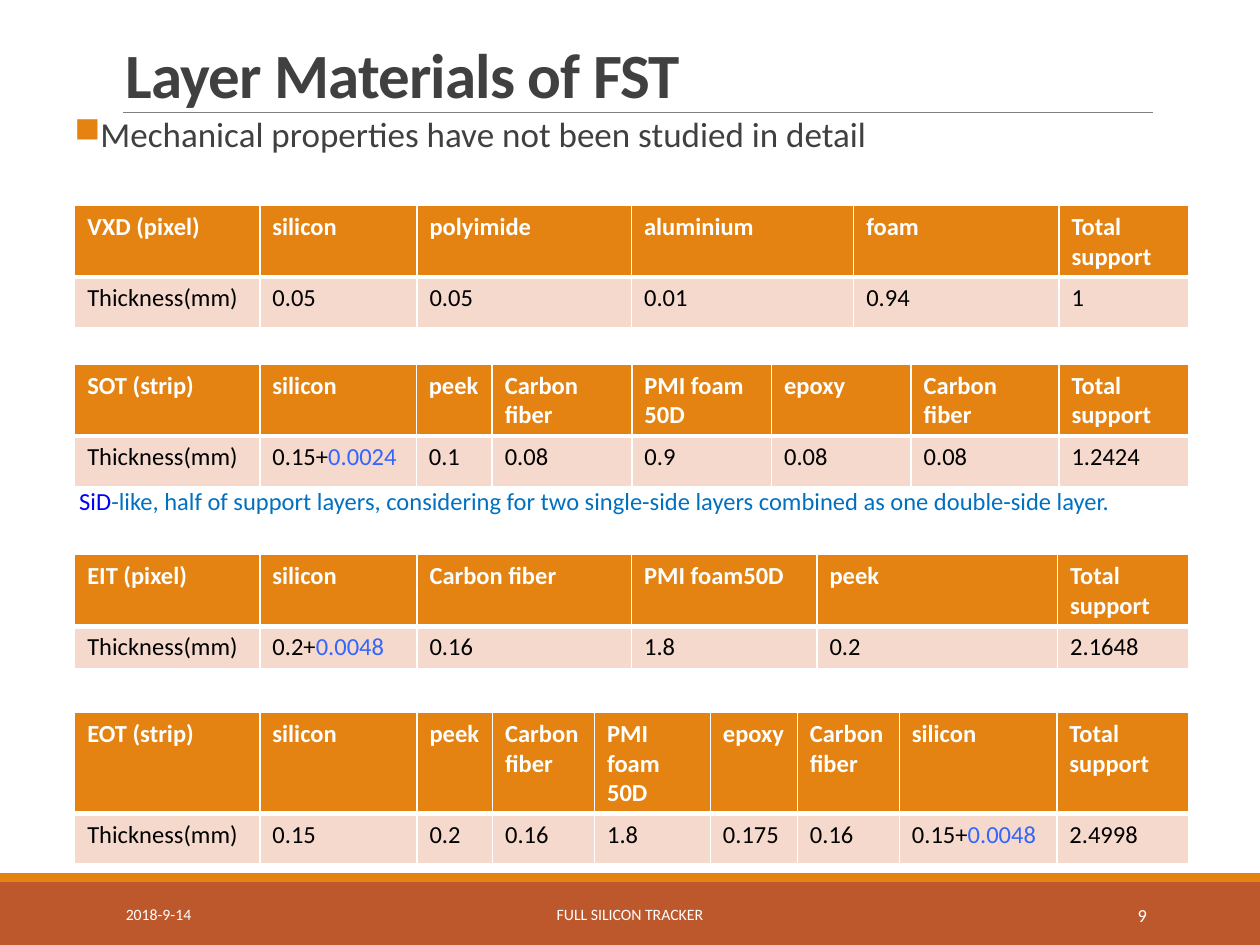
from pptx import Presentation
from pptx.dml.color import RGBColor
from pptx.enum.shapes import MSO_CONNECTOR, MSO_SHAPE
from pptx.enum.text import MSO_ANCHOR, PP_ALIGN
from pptx.oxml import parse_xml
from pptx.oxml.ns import nsdecls
from pptx.util import Pt

LEFT, CENTER, RIGHT = PP_ALIGN.LEFT, PP_ALIGN.CENTER, PP_ALIGN.RIGHT
TOP, MIDDLE, BOTTOM = MSO_ANCHOR.TOP, MSO_ANCHOR.MIDDLE, MSO_ANCHOR.BOTTOM
RECT, STRAIGHT = MSO_SHAPE.RECTANGLE, MSO_CONNECTOR.STRAIGHT
ORANGE, RUST, PINK = "E48312", "BD582C", "F5D9CC"
WHITE, BLACK, DARK, BLUE = "FFFFFF", "000000", "404040", "3366FF"

rgb = RGBColor.from_string


def write(tf, text, size, colors, bold=False):
    """Fill a text frame; "|" splits a line into runs, coloured in turn."""
    tf.text = text.replace("|", "")
    for p, line in zip(tf.paragraphs, text.split("\n")):
        p.text = ""
        for part, color in zip(line.split("|"), colors):
            r = p.add_run()
            r.text = part
            r.font.name = "Calibri"
            r.font.size = Pt(size)
            r.font.bold = bold
            r.font.color.rgb = rgb(color)


prs = Presentation()
prs.slide_width, prs.slide_height = Pt(720), Pt(540)
s = prs.slides.add_slide(prs.slide_layouts[6])

# Footer bands and title rule
for top, height, color in [(504, 36, RUST), (499, 5, ORANGE)]:
    sp = s.shapes.add_shape(RECT, 0, Pt(top), Pt(720), Pt(height))
    sp.shadow.inherit = False
    sp.fill.solid()
    sp.fill.fore_color.rgb = rgb(color)
    sp.line.fill.background()

rule = s.shapes.add_connector(STRAIGHT, Pt(70.5), Pt(64.1), Pt(659), Pt(64.1))
rule.line.color.rgb = rgb("808080")
rule.line.width = Pt(0.5)
rule._element.spPr.append(parse_xml(f"<a:effectLst {nsdecls('a')}/>"))

# Text: left, top, width, height, text, size, colours, bold, anchor, alignment
texts = [
    (64.8, 10.1, 594, 56.9, "Layer Materials of FST", 36, [DARK], True, BOTTOM, LEFT),
    (42.5, 63.4, 636.5, 38.9, "Mechanical properties have not been studied in detail",
     20, [DARK], False, TOP, LEFT),
    (64.8, 508.3, 146.2, 28.8, "2018-9-14", 9, [WHITE], False, MIDDLE, LEFT),
    (217.4, 508.3, 285.1, 28.8, "FULL SILICON TRACKER", 9, [WHITE], False, MIDDLE, CENTER),
    (584.6, 508.3, 77.8, 28.8, "9", 10.5, [WHITE], False, MIDDLE, RIGHT),
    (38.2, 274.3, 636.5, 24.5,
     "SiD|-like, half of support layers, considering for two single-side layers "
     "combined as one double-side layer.",
     14, ["0000FF", "0070C0"], False, TOP, LEFT),
]
frames = []
for left, top, width, height, text, size, colors, bold, anchor, align in texts:
    tf = s.shapes.add_textbox(Pt(left), Pt(top), Pt(width), Pt(height)).text_frame
    tf.word_wrap = True
    tf.vertical_anchor = anchor
    write(tf, text, size, colors, bold)
    tf.paragraphs[0].alignment = align
    frames.append(tf)

title, body = frames[:2]
title.paragraphs[0].line_spacing = 0.85
title.paragraphs[0].runs[0]._r.get_or_add_rPr().set("spc", "-50")

body.margin_left = body.margin_right = 0
p = body.paragraphs[0]
p.line_spacing = 0.9
p.space_before, p.space_after = Pt(12), Pt(2)
pPr = p._p.get_or_add_pPr()
pPr.set("marL", str(Pt(7.2)))
pPr.set("indent", str(-Pt(7.2)))
pPr.append(parse_xml(
    f'<a:buClr {nsdecls("a")}><a:srgbClr val="{ORANGE}"/></a:buClr>'))
pPr.append(parse_xml(f'<a:buChar {nsdecls("a")} char="■"/>'))

# Tables: top, body row height, column widths, headings, thicknesses
tables = [
    (117.5, 29, [105.8, 89.8, 122.6, 127, 117.3, 74],
     ["VXD (pixel)", "silicon", "polyimide", "aluminium", "foam", "Total\nsupport"],
     ["0.05", "0.05", "0.01", "0.94", "1"]),
    (208.3, 29, [105.8, 89.4, 43.4, 79.8, 79.8, 79.8, 84.5, 74],
     ["SOT (strip)", "silicon", "peek", "Carbon\nfiber", "PMI foam\n50D", "epoxy",
      "Carbon\nfiber", "Total support"],
     ["0.15+|0.0024", "0.1", "0.08", "0.9", "0.08", "0.08", "1.2424"]),
    (317, 24, [105.8, 89.8, 122.6, 106, 137.5, 74.8],
     ["EIT (pixel)", "silicon", "Carbon fiber", "PMI foam50D", "peek", "Total support"],
     ["0.2+|0.0048", "0.16", "1.8", "0.2", "2.1648"]),
    (407.2, 29, [105.8, 89.8, 43.2, 58.3, 66.2, 49.7, 58.3, 90, 75.2],
     ["EOT (strip)", "silicon", "peek", "Carbon fiber", "PMI foam\n50D", "epoxy",
      "Carbon\nfiber", "silicon", "Total support"],
     ["0.15", "0.2", "0.16", "1.8", "0.175", "0.16", "0.15+|0.0048", "2.4998"]),
]
HEADER_HEIGHT = 40.8
# Fill, text colours, bold, and border widths for left, right, top, bottom
row_styles = [(ORANGE, [WHITE], True, (1, 1, 1, 3)),
              (PINK, [BLACK, BLUE], False, (1, 1, 3, 1))]

for top, body_height, widths, headings, values in tables:
    table = s.shapes.add_table(2, len(widths), Pt(42.7), Pt(top), Pt(sum(widths)),
                               Pt(HEADER_HEIGHT + body_height)).table
    for column, width in zip(table.columns, widths):
        column.width = Pt(width)
    rows = [headings, ["Thickness(mm)"] + values]
    heights = [HEADER_HEIGHT, body_height]
    for row, height, row_texts, style in zip(table.rows, heights, rows, row_styles):
        row.height = Pt(height)
        fill, colors, bold, borders = style
        for cell, text in zip(row.cells, row_texts):
            write(cell.text_frame, text, 14, colors, bold)
            tcPr = cell._tc.get_or_add_tcPr()
            for side, width in zip("LRTB", borders):
                tcPr.append(parse_xml(
                    f'<a:ln{side} {nsdecls("a")} w="{Pt(width)}"><a:solidFill>'
                    f'<a:srgbClr val="{WHITE}"/></a:solidFill></a:ln{side}>'))
            cell.fill.solid()
            cell.fill.fore_color.rgb = rgb(fill)

prs.save("out.pptx")
